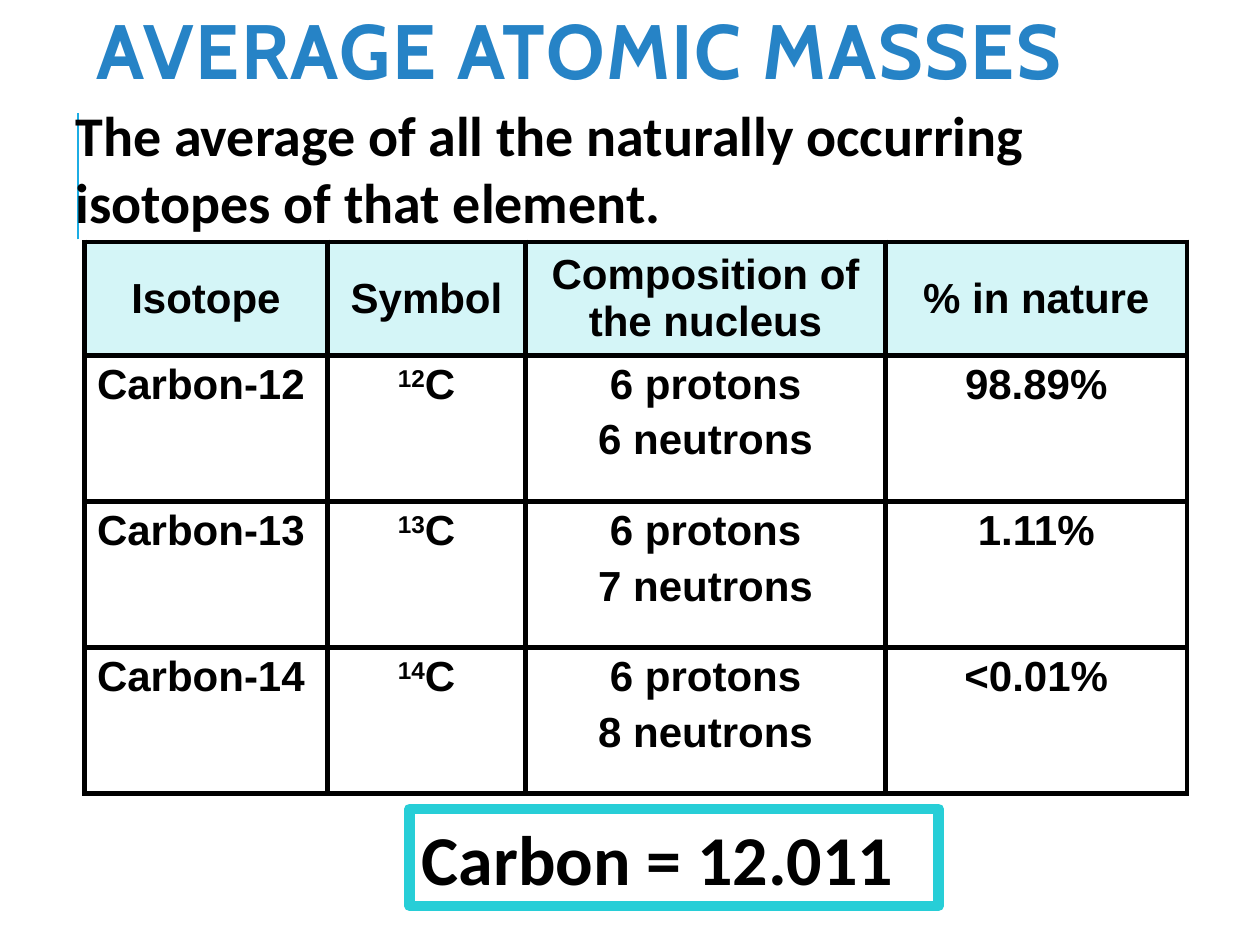
from lxml.etree import SubElement
from pptx import Presentation
from pptx.dml.color import RGBColor
from pptx.enum.shapes import MSO_CONNECTOR, MSO_SHAPE
from pptx.enum.text import MSO_ANCHOR, PP_ALIGN
from pptx.oxml.ns import qn
from pptx.util import Inches, Pt

# Content
TITLE = "AVERAGE ATOMIC MASSES"
DEFINITION = "The average of all the naturally occurring isotopes of that element."
RESULT = "Carbon = 12.011"
HEADERS = ["Isotope", "Symbol", "Composition of the nucleus", "% in nature"]
ISOTOPES = [(12, "98.89%"), (13, "1.11%"), (14, "<0.01%")]
PROTONS = 6

# Formats
TITLE_FONT = {"name": "Cabin", "size": Pt(44), "bold": True, "color": "2683C6"}
BODY_FONT = {"name": "Calibri", "size": Pt(32), "bold": True, "color": "000000"}
RESULT_FONT = {**BODY_FONT, "size": Pt(40)}
TABLE_FONT = {"name": "Arial", "size": Pt(24), "bold": True, "color": "000000"}
COLUMN_WIDTHS = [1.93, 1.57, 2.86, 2.39]
ROW_HEIGHTS = [0.87] + [1.16] * len(ISOTOPES)


def color(value):
    return RGBColor.from_string(value)


def add_span(para, text, font_format):
    span = para.add_run()
    span.text = text
    for key, value in font_format.items():
        if key == "color":
            span.font.color.rgb = color(value)
        else:
            setattr(span.font, key, value)
    return span


def add_text_box(page, area, text, font_format, anchor=MSO_ANCHOR.TOP):
    box = page.shapes.add_textbox(*map(Inches, area))
    box.text_frame.word_wrap = True
    box.text_frame.vertical_anchor = anchor
    para = box.text_frame.paragraphs[0]
    return para, add_span(para, text, font_format)


def add_borders(cell, line_color, width):
    properties = cell._tc.get_or_add_tcPr()
    for side in ("a:lnL", "a:lnR", "a:lnT", "a:lnB"):
        line = SubElement(properties, qn(side), w=str(Pt(width)))
        fill = SubElement(line, qn("a:solidFill"))
        SubElement(fill, qn("a:srgbClr"), val=line_color)


def fill_cell(cell, lines, fill, align, anchor):
    """Each line is a list of (text, baseline percent) spans."""
    add_borders(cell, "000000", 3)
    cell.fill.solid()
    cell.fill.fore_color.rgb = color(fill)
    cell.vertical_anchor = anchor
    frame = cell.text_frame
    for number, spans in enumerate(lines):
        para = frame.add_paragraph() if number else frame.paragraphs[0]
        para.alignment = align
        spacing = SubElement(para._p.get_or_add_pPr(), qn("a:spcBef"))
        SubElement(spacing, qn("a:spcPct"), val="20000")
        for text, baseline in spans:
            span = add_span(para, text, TABLE_FONT)
            if baseline:
                span.font._element.set("baseline", str(baseline * 1000))


def isotope_row(mass, share):
    return [
        [[(f"Carbon-{mass}", 0)]],
        [[(str(mass), 30), ("C", 0)]],
        [[(f"{PROTONS} protons", 0)], [(f"{mass - PROTONS} neutrons", 0)]],
        [[(share, 0)]],
    ]


def add_isotope_table(page):
    rows = [[[[(header, 0)]] for header in HEADERS]]
    rows += [isotope_row(*isotope) for isotope in ISOTOPES]
    area = (0.67, 1.92, sum(COLUMN_WIDTHS), sum(ROW_HEIGHTS))
    table = page.shapes.add_table(len(rows), len(HEADERS), *map(Inches, area)).table
    for column, width in zip(table.columns, COLUMN_WIDTHS):
        column.width = Inches(width)
    for row, height in zip(table.rows, ROW_HEIGHTS):
        row.height = Inches(height)
    for r, row in enumerate(rows):
        for c, lines in enumerate(row):
            fill_cell(
                table.cell(r, c), lines,
                fill="FFFFFF" if r else "D4F5F7",
                align=PP_ALIGN.LEFT if r and c == 0 else PP_ALIGN.CENTER,
                anchor=MSO_ANCHOR.TOP if r else MSO_ANCHOR.MIDDLE,
            )


def main():
    deck = Presentation()
    deck.slide_width, deck.slide_height = Inches(10), Inches(7.5)
    page = deck.slides.add_slide(deck.slide_layouts[6])

    # Accent line
    accent = page.shapes.add_connector(
        MSO_CONNECTOR.STRAIGHT, *map(Inches, (0.62, 1.9, 0.62, 0.9)))
    accent.line.color.rgb = color("1CADE4")
    accent.line.width = Pt(1.5)
    SubElement(accent._element.spPr, qn("a:effectLst"))

    # Title
    para, span = add_text_box(
        page, (0.67, 0.08, 8.58, 0.75), TITLE, TITLE_FONT, MSO_ANCHOR.MIDDLE)
    para.line_spacing = 0.8
    span.font._element.set("spc", "100")

    # Isotope table and definition
    add_isotope_table(page)
    add_text_box(page, (0.5, 0.75, 8.92, 1.18), DEFINITION, BODY_FONT)

    # Framed result
    frame = page.shapes.add_shape(
        MSO_SHAPE.RECTANGLE, *map(Inches, (3.25, 6.42, 4.2, 0.77)))
    frame.shadow.inherit = False
    frame.fill.background()
    frame.line.color.rgb = color("27CED7")
    frame.line.width = Pt(6)
    frame.text_frame.word_wrap = True
    frame.text_frame.vertical_anchor = MSO_ANCHOR.TOP
    para = frame.text_frame.paragraphs[0]
    para.alignment = PP_ALIGN.LEFT
    add_span(para, RESULT, RESULT_FONT)

    deck.save("out.pptx")


if __name__ == "__main__":
    main()
